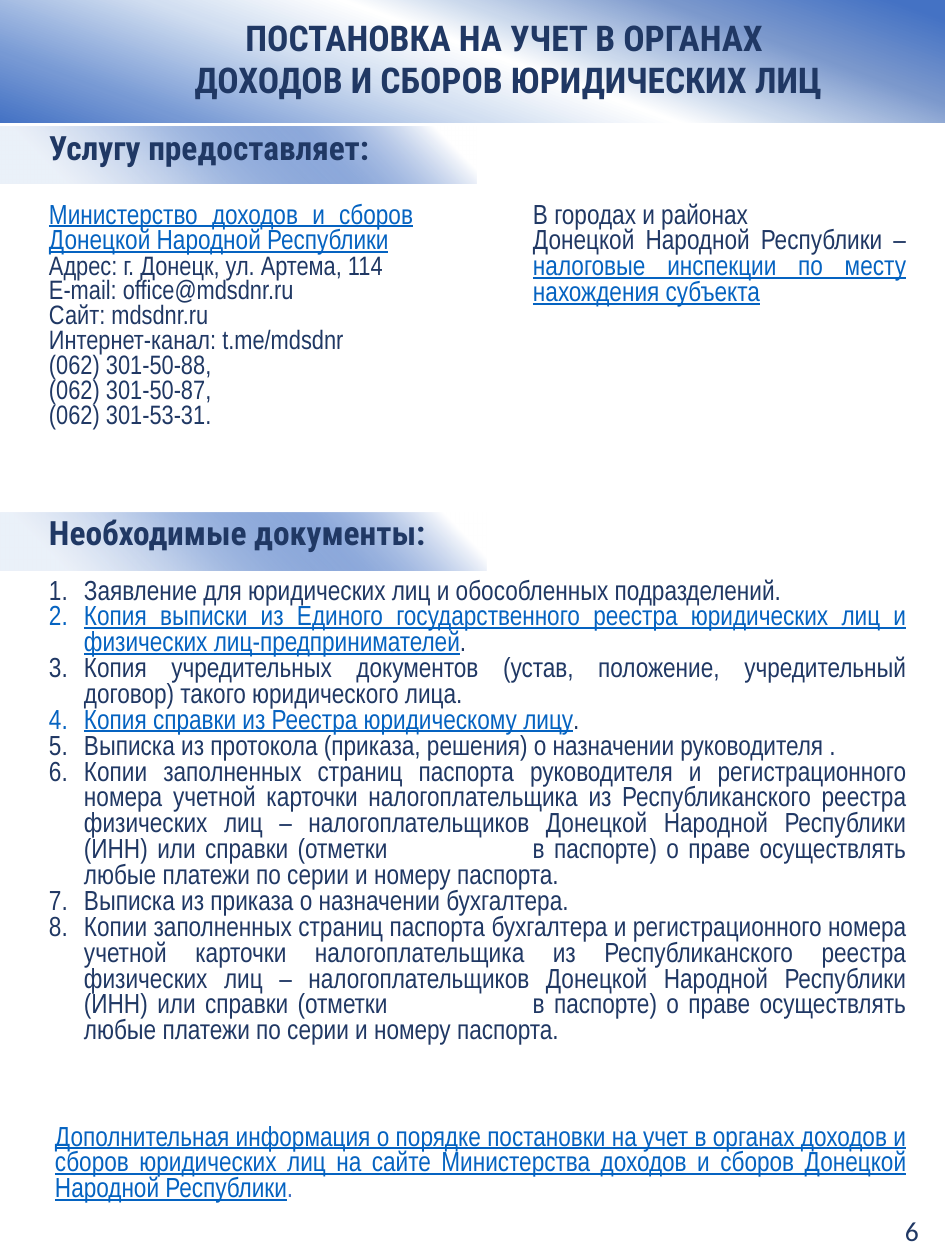
from lxml import etree
from pptx import Presentation
from pptx import util as u
from pptx.dml.color import RGBColor
from pptx.enum import shapes, text
from pptx.oxml import parse_xml
from pptx.oxml.ns import nsdecls, qn

SLIDE = (945, 1260)
PX = 12192000 / SLIDE[0]
NAVY = RGBColor(0x20, 0x38, 0x64)
LINK = RGBColor(0x05, 0x63, 0xC1)
BLUE = RGBColor(0x44, 0x72, 0xC4)
HEAD, BODY = "Roboto Condensed", "Arial Narrow"

# Content: a paragraph is a list of (text, format) runs
HREF = dict(color=LINK, underline=True)
SMALL = dict(size=27)
TITLE = ["ПОСТАНОВКА НА УЧЕТ В ОРГАНАХ ", "ДОХОДОВ И СБОРОВ ЮРИДИЧЕСКИХ ЛИЦ"]
PROVIDER_HEAD = "Услугу предоставляет:"
DOCUMENTS_HEAD = "Необходимые документы:"
MINISTRY = [[("Министерство доходов и сборов Донецкой Народной Республики", HREF)]] + [
    [(line, SMALL)] for line in (
        "Адрес: г. Донецк, ул. Артема, 114",
        "E-mail: office@mdsdnr.ru",
        "Сайт: mdsdnr.ru",
        "Интернет-канал: t.me/mdsdnr",
        "(062) 301-50-88,",
        "(062) 301-50-87,",
        "(062) 301-53-31.",
    )]
INSPECTIONS = [
    [("В городах и районах ", {})],
    [("Донецкой Народной Республики – ", {}),
     ("налоговые инспекции по месту нахождения субъекта", HREF)],
]
PASSPORT = (
    "Копии заполненных страниц паспорта {} и регистрационного номера учетной карточки "
    "налогоплательщика из Республиканского реестра физических лиц – налогоплательщиков "
    "Донецкой Народной Республики (ИНН) или справки (отметки\tв паспорте) о праве "
    "осуществлять любые платежи по серии и номеру паспорта.")
DOCUMENTS = [
    [("Заявление для юридических лиц и обособленных подразделений.", {})],
    [("Копия выписки из Единого государственного реестра юридических лиц и "
      "физических лиц-предпринимателей", HREF), (".", {})],
    [("Копия учредительных документов (устав, положение, учредительный договор) "
      "такого юридического лица.", {})],
    [("Копия справки из Реестра юридическому лицу", HREF), (".", {})],
    [("Выписка из протокола (приказа, решения) о назначении руководителя .", {})],
    [(PASSPORT.format("руководителя"), {})],
    [("Выписка из приказа о назначении бухгалтера.", {})],
    [(PASSPORT.format("бухгалтера"), {})],
]
MORE_INFO = [
    [("Дополнительная информация о порядке постановки на учет в органах доходов и сборов "
      "юридических лиц на сайте Министерства доходов и сборов Донецкой Народной Республики",
      HREF), (".", dict(color=BLUE))],
]
PAGE = "6"

# Gradient stops: position %, colour, opacity %
BANNER_STOPS = [(0, "4472C4", 100), (15, "7799D4", 100), (38, "D2DFF1", 100),
                (53, "FFFFFF", 100), (62, "CAD8EC", 100), (78, "7B98CC", 100),
                (96, "4472C4", 100)]
STRIP_STOPS = [(13, "DDE6F4", 57), (40, "ABC0E4", 100), (67, "4472C4", 60),
               (92, "FFFFFF", 100)]

# Geometry in px
BANNER = (0, 0, 947, 123)
STRIPS = [(-1, 127, 478, 57), (-3, 513, 490, 57)]
TABLE_AT = (-4, 125)
COLS = [478, 493]
ROWS = [75, 310, 66, 546, 139]
PAGE_BOX = (898, 1210, 28, 40)
INSET, INSET_WIDE, INSET_RIGHT = 53, 59, 61
HANG, GAP_TAB = 35, 474


def px(*values):
    return [u.Emu(round(v * PX)) for v in values]


def add_run(p, content, size=28, font=BODY, color=NAVY, bold=False, underline=None):
    r = p.add_run()
    r.text = content
    f = r.font
    f.size, f.name, f.bold, f.underline = u.Pt(size), font, bold, underline
    f.color.rgb = color


def fill_text(tf, paragraphs, align=text.PP_ALIGN.JUSTIFY, numbered=False, **fmt):
    for i, runs in enumerate(paragraphs):
        p = tf.paragraphs[0] if i == 0 else tf.add_paragraph()
        p.alignment = align
        if numbered:
            number(p, any("\t" in content for content, _ in runs))
        for content, own in runs:
            add_run(p, content, **{**fmt, **own})


def number(p, has_gap):
    pPr = p._p.get_or_add_pPr()
    hang = px(HANG)[0]
    pPr.set("marL", str(hang))
    pPr.set("indent", str(-hang))
    etree.SubElement(pPr, qn("a:buFont"), typeface="+mj-lt")
    etree.SubElement(pPr, qn("a:buAutoNum"), type="arabicPeriod")
    if has_gap:
        tabs = etree.SubElement(pPr, qn("a:tabLst"))
        etree.SubElement(tabs, qn("a:tab"), pos=str(px(GAP_TAB)[0]), algn="l")


def gradient(sp, stops, angle):
    gs = "".join(
        f'<a:gs pos="{pos * 1000}"><a:srgbClr val="{rgb}">'
        f'<a:alpha val="{alpha * 1000}"/></a:srgbClr></a:gs>' for pos, rgb, alpha in stops)
    fill = parse_xml(f'<a:gradFill {nsdecls("a")} rotWithShape="1"><a:gsLst>{gs}</a:gsLst>'
                     f'<a:lin ang="{angle * 60000}" scaled="0"/></a:gradFill>')
    sp.fill.background()
    spPr = sp._element.spPr
    spPr.replace(spPr.find(qn("a:noFill")), fill)


def set_insets(box, left, top, right, bottom):
    (box.margin_left, box.margin_top,
     box.margin_right, box.margin_bottom) = px(left, top, right, bottom)


def main():
    prs = Presentation()
    prs.slide_width, prs.slide_height = px(*SLIDE)
    s = prs.slides.add_slide(prs.slide_layouts[5])

    # Title banner
    title = s.shapes.title
    title.left, title.top, title.width, title.height = px(*BANNER)
    gradient(title, BANNER_STOPS, 290)
    tf = title.text_frame
    tf.auto_size = text.MSO_AUTO_SIZE.NONE
    tf.vertical_anchor = text.MSO_ANCHOR.TOP
    set_insets(tf, 77, 16, 7, 4)
    fill_text(tf, [[(line, {})] for line in TITLE], align=text.PP_ALIGN.CENTER,
              size=36, font=HEAD, bold=True)

    # Strips behind the section headings
    for box in STRIPS:
        sp = s.shapes.add_shape(shapes.MSO_SHAPE.RECTANGLE, *px(*box))
        sp.shadow.inherit = False
        sp.line.fill.background()
        gradient(sp, STRIP_STOPS, 315)

    # Table with all sections
    table = s.shapes.add_table(len(ROWS), len(COLS),
                               *px(*TABLE_AT, sum(COLS), sum(ROWS))).table
    table.first_row = table.horz_banding = False
    for col, width in zip(table.columns, px(*COLS)):
        col.width = width
    for row, height in zip(table.rows, px(*ROWS)):
        row.height = height
    for cell in table.iter_cells():
        cell.fill.background()
    for i in (0, 2, 3, 4):
        table.cell(i, 0).merge(table.cell(i, 1))

    heading = dict(align=text.PP_ALIGN.LEFT, size=34, font=HEAD, bold=True)
    sections = [
        (0, 0, INSET, [[(PROVIDER_HEAD, {})]], heading),
        (1, 0, INSET, MINISTRY, {}),
        (1, 1, INSET_WIDE, INSPECTIONS, {}),
        (2, 0, INSET, [[(DOCUMENTS_HEAD, {})]], heading),
        (3, 0, INSET, DOCUMENTS, dict(numbered=True)),
        (4, 0, INSET_WIDE, MORE_INFO, {}),
    ]
    for row, col, left, paragraphs, fmt in sections:
        cell = table.cell(row, col)
        set_insets(cell, left, 4, INSET_RIGHT, 4)
        fill_text(cell.text_frame, paragraphs, **fmt)

    # Page number
    tf = s.shapes.add_textbox(*px(*PAGE_BOX)).text_frame
    tf.word_wrap = False
    fill_text(tf, [[(PAGE, {})]], align=text.PP_ALIGN.LEFT, font="Calibri")

    prs.save("out.pptx")


if __name__ == "__main__":
    main()
